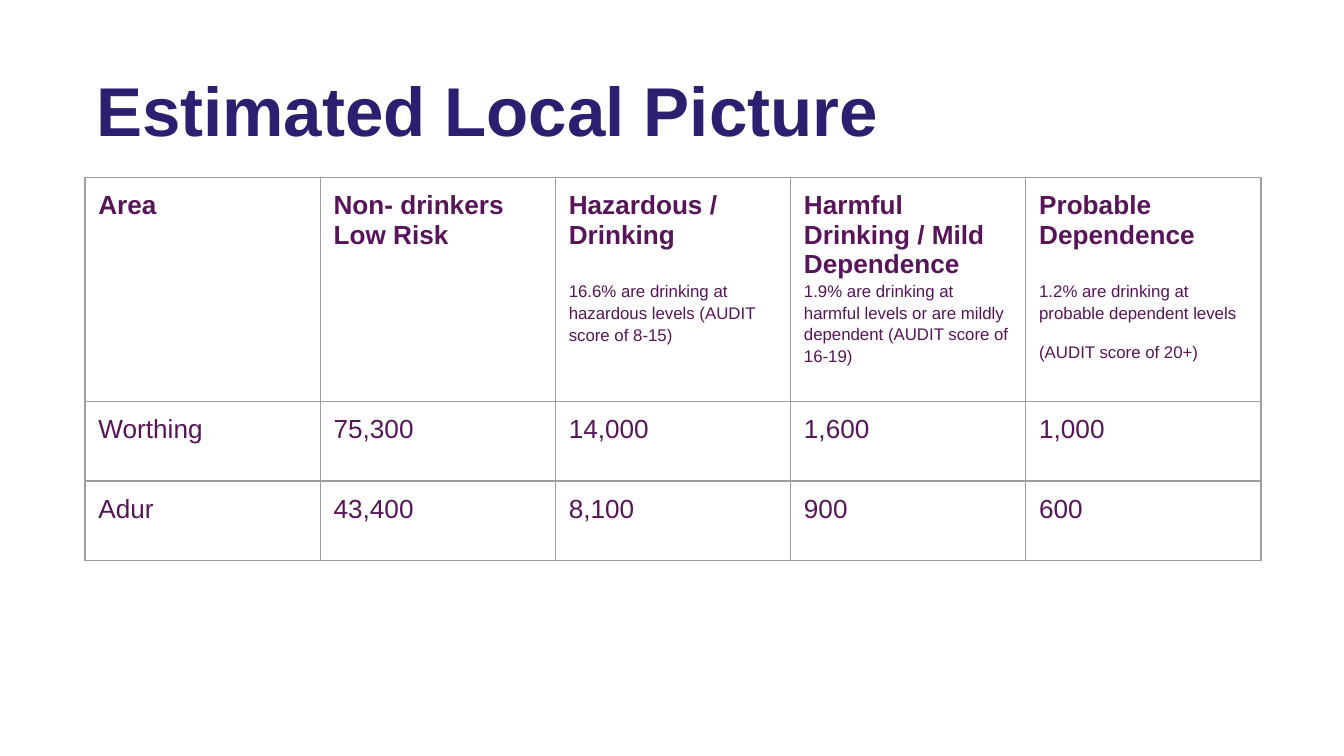
from lxml.etree import SubElement
from pptx import Presentation
from pptx.dml.color import RGBColor
from pptx.enum.text import MSO_ANCHOR
from pptx.oxml.ns import qn
from pptx.util import Pt

NAVY, PLUM, GREY = "2A206F", "571459", "9E9E9E"
HEADING = {"size": Pt(14), "bold": True}
NOTE = {"size": Pt(9), "bold": False}
BODY = {"size": Pt(14), "bold": False}

# Each column heading: its lines, the gap below them, and its notes
HEADERS = [
    (["Area"], 0, []),
    (["Non- drinkers", "Low Risk"], 0, []),
    (["Hazardous / Drinking"], 16,
     ["16.6% are drinking at hazardous levels (AUDIT score of 8-15)"]),
    (["Harmful Drinking / Mild Dependence"], 0,
     ["1.9% are drinking at harmful levels or are mildly dependent "
      "(AUDIT score of 16-19)"]),
    (["Probable Dependence"], 16,
     ["1.2% are drinking at probable dependent levels",
      "(AUDIT score of 20+)"]),
]
AREAS = [
    ["Worthing", "75,300", "14,000", "1,600", "1,000"],
    ["Adur", "43,400", "8,100", "900", "600"],
]
HEADER_HEIGHT, AREA_HEIGHT = 120, 42.5
NOTE_GAP = 9.5


def color(value):
    return RGBColor.from_string(value)


def add_para(frame, text, style, shade, **spacing):
    """Write into the empty first paragraph, or add another one."""
    first = frame.paragraphs[0]
    para = frame.add_paragraph() if first.runs else first
    for name, value in spacing.items():
        setattr(para, name, value)
    span = para.add_run()
    span.text = text
    for name, value in {"name": "Arial", **style}.items():
        setattr(span.font, name, value)
    span.font.color.rgb = color(shade)


def set_margins(target, margin):
    for side in ("left", "top", "right", "bottom"):
        setattr(target, f"margin_{side}", Pt(margin))


def style_cell(cell):
    set_margins(cell, 7.2)
    cell.vertical_anchor = MSO_ANCHOR.TOP
    # Borders must come before the fill in the cell properties
    props = cell._tc.get_or_add_tcPr()
    for side in ("lnL", "lnR", "lnT", "lnB"):
        line = SubElement(props, qn(f"a:{side}"), w=str(Pt(0.75)))
        fill = SubElement(line, qn("a:solidFill"))
        SubElement(fill, qn("a:srgbClr"), val=GREY)
    cell.fill.background()


def add_title(page, left, top, width, height):
    box = page.shapes.add_textbox(Pt(left), Pt(top), Pt(width), Pt(height))
    frame = box.text_frame
    frame.word_wrap = True
    set_margins(frame, 0)
    add_para(frame, "Estimated Local Picture",
             {"size": Pt(37), "bold": True}, NAVY)


def fill_header(cell, lines, gap, notes):
    frame = cell.text_frame
    for line in lines:
        add_para(frame, line, HEADING, PLUM)
    for index, note in enumerate(notes):
        add_para(frame, note, NOTE, PLUM, line_spacing=1.15,
                 space_before=Pt(NOTE_GAP if index else gap))


def add_area_table(page, left, top, width, height):
    table = page.shapes.add_table(
        len(AREAS) + 1, len(HEADERS),
        Pt(left), Pt(top), Pt(width), Pt(height)).table
    table.first_row = table.horz_banding = False
    for column in table.columns:
        column.width = Pt(width / len(HEADERS))
    for index, row in enumerate(table.rows):
        row.height = Pt(AREA_HEIGHT if index else HEADER_HEIGHT)
    for cell in table.iter_cells():
        style_cell(cell)

    # Heading row
    for index, header in enumerate(HEADERS):
        fill_header(table.cell(0, index), *header)
    # One row for each area
    for row_index, values in enumerate(AREAS, start=1):
        for index, value in enumerate(values):
            add_para(table.cell(row_index, index).text_frame,
                     value, BODY, PLUM)


def main():
    deck = Presentation()
    deck.slide_width, deck.slide_height = Pt(720), Pt(405)
    page = deck.slides.add_slide(deck.slide_layouts[6])
    add_title(page, 51.5, 36, 501, 50)
    add_area_table(page, 45.5, 95.25, 630,
                   HEADER_HEIGHT + AREA_HEIGHT * len(AREAS))
    deck.save("out.pptx")


if __name__ == "__main__":
    main()
